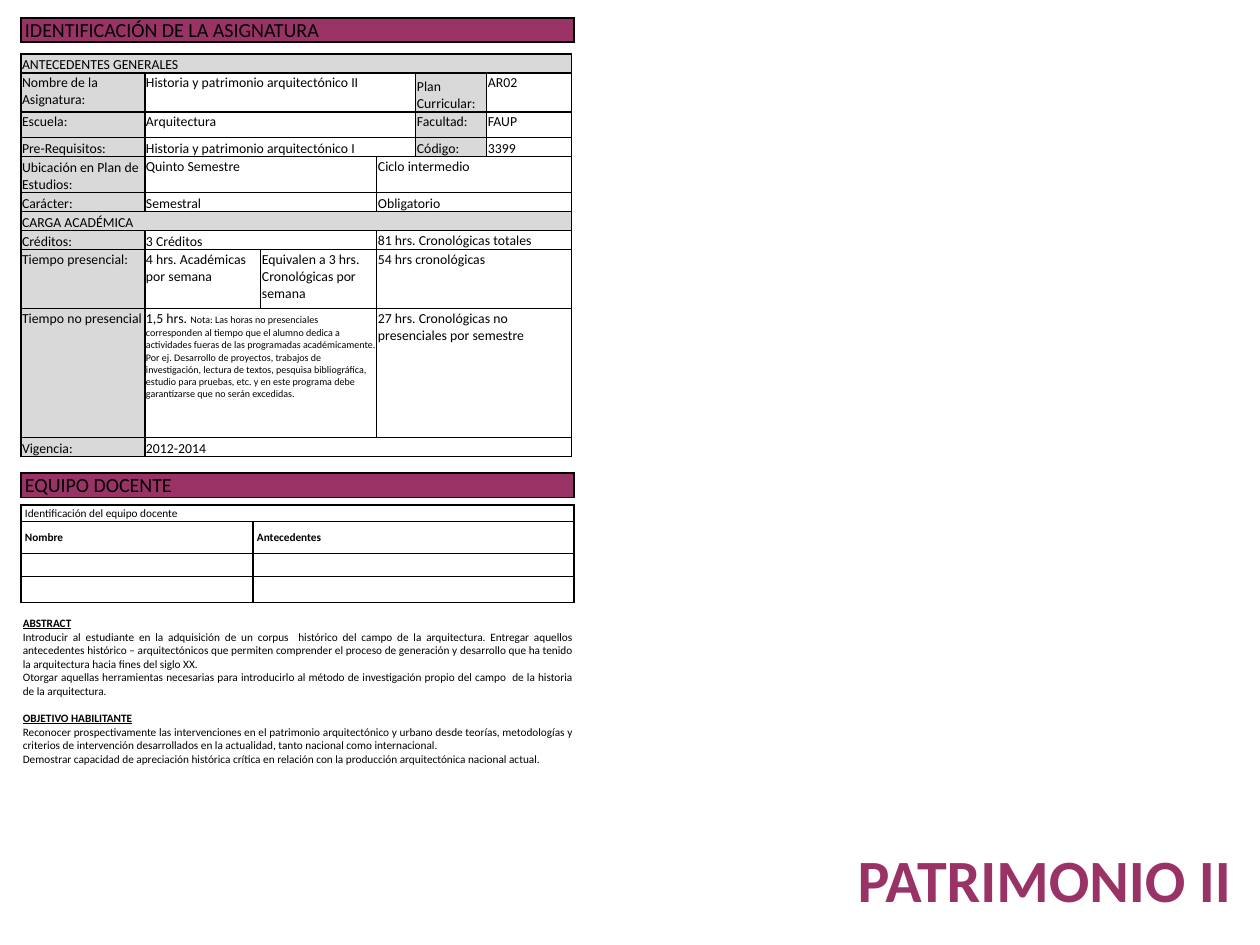
from dataclasses import dataclass

from lxml import etree
from pptx import Presentation
from pptx.dml.color import RGBColor
from pptx.enum.text import MSO_ANCHOR, PP_ALIGN
from pptx.oxml.ns import qn
from pptx.util import Pt

PX = 10160  # EMU per px, 90 px to the inch
FONT = "Calibri"
COLORS = {"plum": "993366", "grey": "D9D9D9", "black": "000000"}
TOP, MIDDLE, BOTTOM = MSO_ANCHOR.TOP, MSO_ANCHOR.MIDDLE, MSO_ANCHOR.BOTTOM
RIGHT, JUSTIFY = PP_ALIGN.RIGHT, PP_ALIGN.JUSTIFY


@dataclass
class Cell:
    text: str = ""
    span: int = 1
    anchor: MSO_ANCHOR = TOP
    fill: str = ""
    bold: bool = False
    note: str = ""


@dataclass
class Grid:
    left: int
    top: int
    columns: list[int]
    heights: list[int]
    rows: list[list[Cell]]
    size: int
    margins: tuple[int, int]  # sides, top


@dataclass
class Section:
    heading: str
    body: list[str]


def label(text: str, anchor: MSO_ANCHOR = TOP, span: int = 1) -> Cell:
    return Cell(text, span, anchor, "grey")


def banner(text: str, top: int) -> Grid:
    return Grid(21, top, [553], [24], [[Cell(text, fill="plum")]], 16, (4, 0))


def style(run, size: int, color: str = "black", bold: bool = False) -> None:
    run.font.name = FONT
    run.font.size = Pt(size)
    run.font.bold = bold
    run.font.color.rgb = RGBColor.from_string(COLORS[color])


def add_borders(cell) -> None:
    properties = cell._tc.get_or_add_tcPr()
    for side in ("lnL", "lnR", "lnT", "lnB"):
        line = etree.SubElement(properties, qn(f"a:{side}"), w=str(Pt(1)))
        solid = etree.SubElement(line, qn("a:solidFill"))
        etree.SubElement(solid, qn("a:srgbClr"), val=COLORS["black"])


def fill_cell(cell, content: Cell, grid: Grid) -> None:
    side, top = grid.margins
    cell.margin_left = cell.margin_right = side * PX
    cell.margin_top, cell.margin_bottom = top * PX, 0
    cell.vertical_anchor = content.anchor
    paragraph = cell.text_frame.paragraphs[0]
    if not content.text:
        etree.SubElement(paragraph._p, qn("a:endParaRPr"), sz=str(grid.size * 100))
        return
    paragraph.text = content.text
    style(paragraph.runs[0], grid.size, bold=content.bold)
    if content.note:
        note = paragraph.add_run()
        note.text = content.note
        style(note, 8)


def draw_grid(slide, grid: Grid) -> None:
    table = slide.shapes.add_table(
        len(grid.heights), len(grid.columns), grid.left * PX, grid.top * PX,
        sum(grid.columns) * PX, sum(grid.heights) * PX).table
    table.first_row = table.horz_banding = False
    for column, width in zip(table.columns, grid.columns):
        column.width = width * PX
    for row, height in zip(table.rows, grid.heights):
        row.height = height * PX
    for r, contents in enumerate(grid.rows):
        c = 0
        for content in contents:
            for covered in range(c, c + content.span):
                cell = table.cell(r, covered)
                add_borders(cell)
                if content.fill:
                    cell.fill.solid()
                    cell.fill.fore_color.rgb = RGBColor.from_string(COLORS[content.fill])
                else:
                    cell.fill.background()
            if content.span > 1:
                table.cell(r, c).merge(table.cell(r, c + content.span - 1))
            fill_cell(table.cell(r, c), content, grid)
            c += content.span


def add_text(slide, left: int, top: int, width: int, height: int):
    frame = slide.shapes.add_textbox(left * PX, top * PX, width * PX, height * PX).text_frame
    frame.word_wrap = True
    return frame


def draw_sections(frame, sections: list[Section]) -> None:
    for s, section in enumerate(sections):
        for i, text in enumerate([section.heading, *section.body]):
            paragraph = frame.add_paragraph() if s or i else frame.paragraphs[0]
            paragraph.text = text
            paragraph.alignment = JUSTIFY
            style(paragraph.runs[0], 9, bold=i == 0)
            paragraph.runs[0].font.underline = i == 0
            if s and i == 0:
                paragraph.space_before = Pt(11)


COURSE = Grid(21, 54, [124, 116, 116, 39, 71, 85],
              [19, 39, 26, 19, 36, 19, 19, 19, 59, 129, 19], [
    [label("ANTECEDENTES GENERALES", BOTTOM, 6)],
    [label("Nombre de la Asignatura:"), Cell("Historia y patrimonio arquitectónico II", 3),
     label("Plan Curricular:", BOTTOM), Cell("AR02")],
    [label("Escuela:"), Cell("Arquitectura", 3), label("Facultad:"), Cell("FAUP")],
    [label("Pre-Requisitos:", BOTTOM), Cell("Historia y patrimonio arquitectónico I", 3, BOTTOM),
     label("Código:", BOTTOM), Cell("3399", 1, BOTTOM)],
    [label("Ubicación en Plan de Estudios:", BOTTOM), Cell("Quinto Semestre", 2),
     Cell("Ciclo intermedio", 3)],
    [label("Carácter:", BOTTOM), Cell("Semestral", 2, BOTTOM), Cell("Obligatorio", 3, BOTTOM)],
    [label("CARGA ACADÉMICA", BOTTOM, 6)],
    [label("Créditos:", BOTTOM), Cell("3 Créditos", 2, BOTTOM),
     Cell("81 hrs. Cronológicas totales", 3)],
    [label("Tiempo presencial:"), Cell("4 hrs. Académicas por semana"),
     Cell("Equivalen a 3 hrs. Cronológicas por semana"), Cell("54 hrs cronológicas", 3)],
    [label("Tiempo no presencial"),
     Cell("1,5 hrs. ", 2, note="Nota: Las horas no presenciales corresponden al tiempo que el "
          "alumno dedica a actividades fueras de las programadas académicamente. Por ej. "
          "Desarrollo de proyectos, trabajos de investigación, lectura de textos, pesquisa "
          "bibliográfica, estudio para pruebas, etc. y en este programa debe garantizarse "
          "que no serán excedidas."),
     Cell("27 hrs. Cronológicas no presenciales por semestre", 3)],
    [label("Vigencia:", BOTTOM), Cell("2012-2014", 5, BOTTOM)],
], 11, (1, 1))

TEACHERS = Grid(21, 505, [232, 321], [17, 32, 23, 26], [
    [Cell("Identificación del equipo docente", 2, MIDDLE)],
    [Cell(text, 1, MIDDLE, bold=True) for text in ("Nombre", "Antecedentes")],
    [Cell(), Cell()],
    [Cell(), Cell()],
], 9, (4, 0))

SECTIONS = [
    Section("ABSTRACT", [
        "Introducir al estudiante en la adquisición de un corpus  histórico del campo de la "
        "arquitectura. Entregar aquellos antecedentes histórico – arquitectónicos que permiten "
        "comprender el proceso de generación y desarrollo que ha tenido la arquitectura hacia "
        "fines del siglo XX.",
        "Otorgar aquellas herramientas necesarias para introducirlo al método de investigación "
        "propio del campo  de la historia de la arquitectura."]),
    Section("OBJETIVO HABILITANTE", [
        "Reconocer prospectivamente las intervenciones en el patrimonio arquitectónico y urbano "
        "desde teorías, metodologías y criterios de intervención desarrollados en la actualidad, "
        "tanto nacional como internacional.",
        "Demostrar capacidad de apreciación histórica crítica en relación con la producción "
        "arquitectónica nacional actual."]),
]


def main() -> None:
    presentation = Presentation()
    presentation.slide_width, presentation.slide_height = 1260 * PX, 945 * PX
    slide = presentation.slides.add_slide(presentation.slide_layouts[6])

    # Teaching team banner
    draw_grid(slide, banner("EQUIPO DOCENTE", 473))

    # Course title
    title = add_text(slide, 517, 838, 723, 82).paragraphs[0]
    title.text = "PATRIMONIO II"
    title.alignment = RIGHT
    style(title.runs[0], 48, "plum", bold=True)

    # Course banner, abstract and objective, teachers, course data
    draw_grid(slide, banner("IDENTIFICACIÓN DE LA ASIGNATURA", 18))
    draw_sections(add_text(slide, 14, 612, 567, 159), SECTIONS)
    draw_grid(slide, TEACHERS)
    draw_grid(slide, COURSE)

    presentation.save("out.pptx")


if __name__ == "__main__":
    main()
